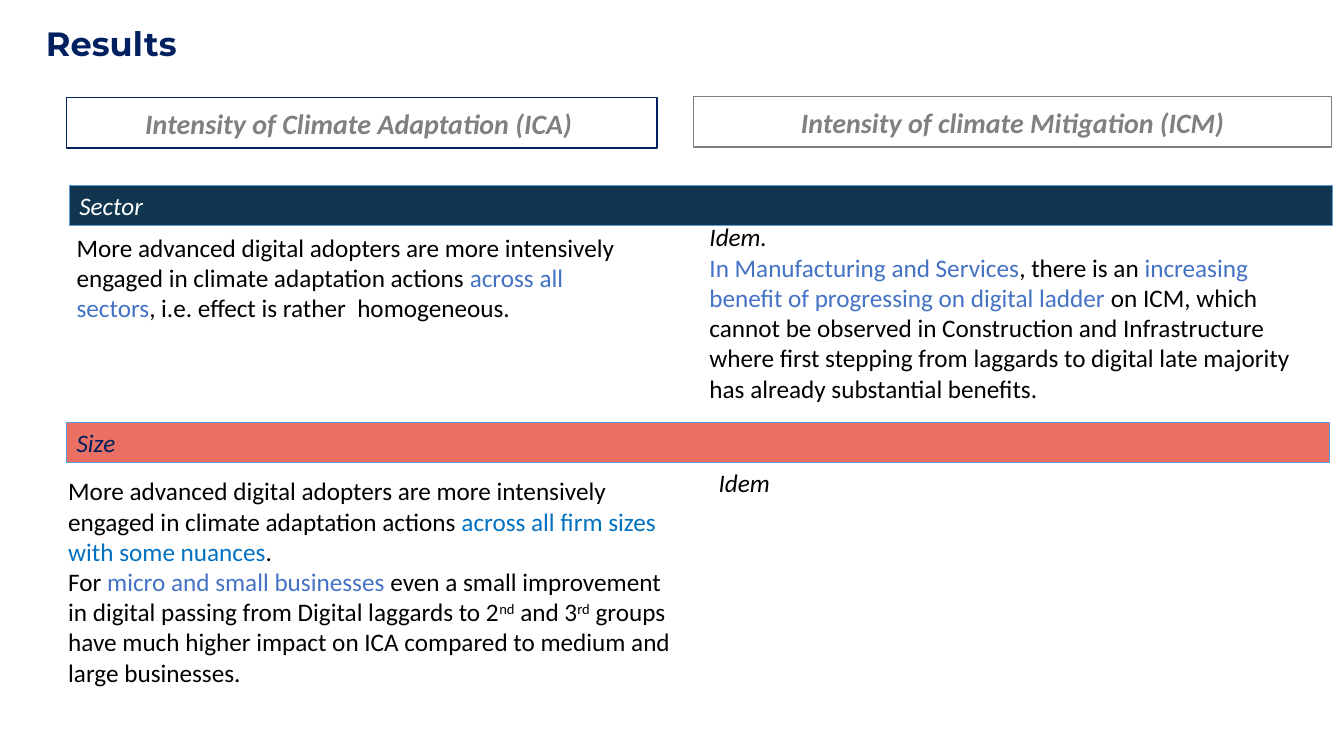
import pptx
import pptx.dml.color
import pptx.enum.shapes
import pptx.enum.text
import pptx.util

Cm = pptx.util.Cm
ALIGN = pptx.enum.text.PP_ALIGN
ANCHOR = pptx.enum.text.MSO_ANCHOR

COLORS = {
    "navy": "002060", "black": "000000", "white": "FFFFFF", "gray": "808080",
    "highlight": "4472C4", "bright": "0070C0", "edge": "5B9BD5",
    "sector": "12364F", "size": "E97062",
}


def rgb(name):
    return pptx.dml.color.RGBColor.from_string(COLORS[name])


def add_text(paragraph, text, font="Calibri", size=18, color="black",
             bold=False, italic=False, superscript=False):
    run = paragraph.add_run()
    run.text = text
    run.font.name = font
    run.font.size = pptx.util.Pt(size)
    run.font.bold = bold
    run.font.italic = italic
    run.font.color.rgb = rgb(color)
    if superscript:
        run.font._element.set("baseline", "30000")


class ResultsSlide:
    def __init__(self, slide, **style):
        self.slide = slide
        self.style = style

    def fill_frame(self, frame, paragraphs, align=ALIGN.LEFT, anchor=ANCHOR.TOP):
        """Each paragraph is a list of (text, format) pairs."""
        frame.word_wrap = True
        frame.vertical_anchor = anchor
        for index, runs in enumerate(paragraphs):
            paragraph = frame.add_paragraph() if index else frame.paragraphs[0]
            paragraph.alignment = align
            for text, look in runs:
                add_text(paragraph, text, **{**self.style, **look})

    def text(self, left, top, width, height, paragraphs):
        box = self.slide.shapes.add_textbox(Cm(left), Cm(top), Cm(width), Cm(height))
        self.fill_frame(box.text_frame, paragraphs)

    def bar(self, left, top, width, height, fill, edge, label, look, **layout):
        bar = self.slide.shapes.add_shape(
            pptx.enum.shapes.MSO_SHAPE.RECTANGLE,
            Cm(left), Cm(top), Cm(width), Cm(height))
        bar.shadow.inherit = False
        bar.fill.solid()
        bar.fill.fore_color.rgb = rgb(fill)
        bar.line.color.rgb = rgb(edge)
        bar.line.width = pptx.util.Pt(1)
        self.fill_frame(bar.text_frame, [[(label, look)]], **layout)


def main():
    deck = pptx.Presentation()
    deck.slide_width, deck.slide_height = Cm(33.87), Cm(19.05)
    results = ResultsSlide(deck.slides.add_slide(deck.slide_layouts[6]),
                           font="Calibri", size=18)
    plain, italic = {}, {"italic": True}
    highlight, bright = {"color": "highlight"}, {"color": "bright"}
    ordinal = {"superscript": True}
    shared_finding = ("More advanced digital adopters are more intensively engaged "
                      "in climate adaptation actions ", plain)

    # Title
    results.text(0.91, 0.46, 21.03, 1.27, [[
        ("Results", {"font": "Montserrat", "size": 24, "color": "navy", "bold": True})]])

    # Sector findings
    results.text(1.68, 5.72, 14.88, 2.57, [[
        shared_finding,
        ("across all sectors", highlight),
        (", i.e. effect is rather  homogeneous.", plain)]])
    results.text(17.63, 5.46, 15.88, 4.88, [
        [("Idem.", italic)],
        [("In Manufacturing and Services", highlight),
         (", there is an ", plain),
         ("increasing benefit of progressing on digital ladder ", highlight),
         ("on ICM, which cannot be observed in Construction and Infrastructure "
          "where first stepping from laggards to digital late majority has "
          "already substantial benefits.", plain)]])

    # Size findings
    results.text(1.47, 11.86, 15.93, 5.64, [
        [shared_finding,
         ("across all firm sizes with some nuances", bright),
         (".", plain)],
        [("For ", plain),
         ("micro and small businesses ", highlight),
         ("even a small improvement in digital passing from Digital laggards to 2", plain),
         ("nd", ordinal),
         (" and 3", plain),
         ("rd", ordinal),
         (" groups have much higher impact on ICA compared to medium and "
          "large businesses.", plain)]])
    results.text(17.86, 11.66, 15.44, 1.02, [[("Idem", italic)]])

    # Column headings
    heading = {"size": 20, "color": "gray", "bold": True, "italic": True}
    for left, top, width, edge, label in (
            (1.68, 2.46, 14.88, "navy", "Intensity of Climate Adaptation (ICA) "),
            (17.48, 2.44, 16.08, "gray", "Intensity of climate Mitigation (ICM)")):
        results.bar(left, top, width, 1.27, "white", edge, label, heading,
                    align=ALIGN.CENTER, anchor=ANCHOR.MIDDLE)

    # Section bands
    for left, top, fill, label, color in (
            (1.75, 4.67, "sector", "Sector", "white"),
            (1.68, 10.64, "size", "Size", "navy")):
        results.bar(left, top, 31.83, 1.02, fill, "edge", label,
                    {"color": color, "italic": True})

    deck.save("out.pptx")


if __name__ == "__main__":
    main()
